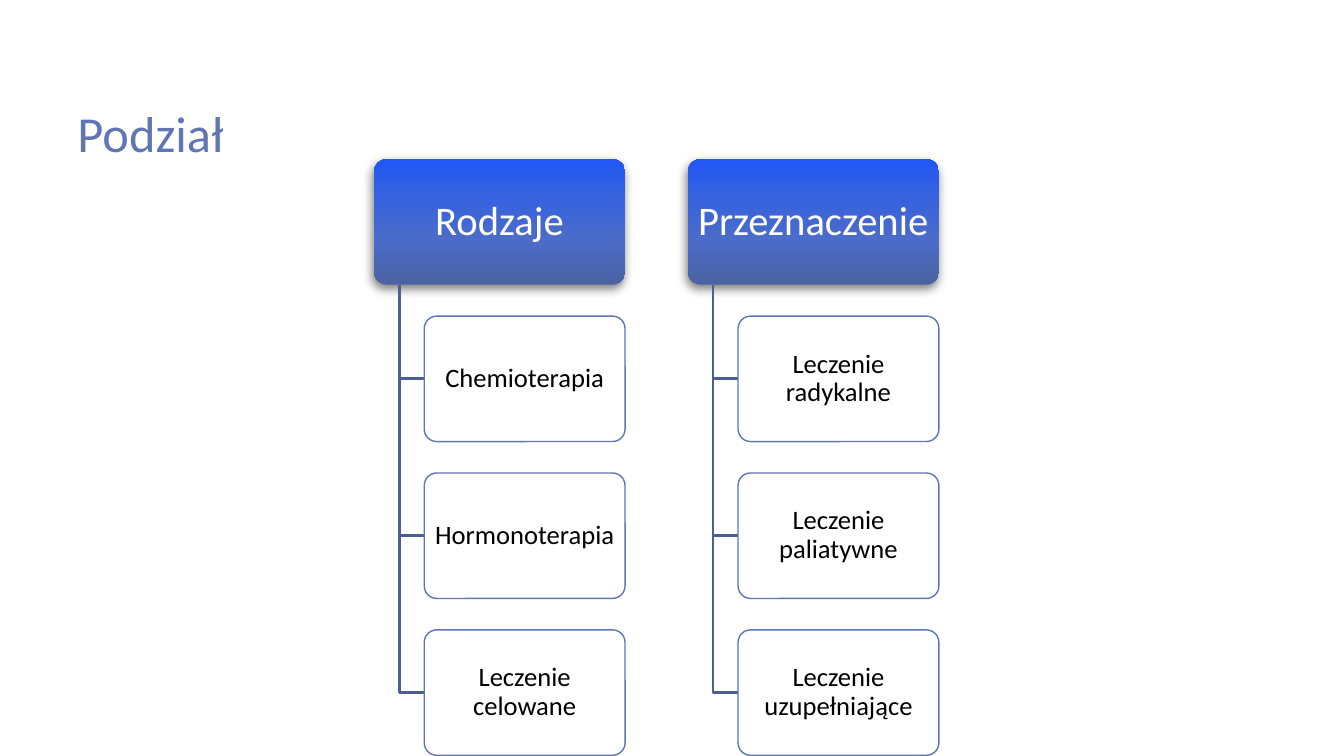
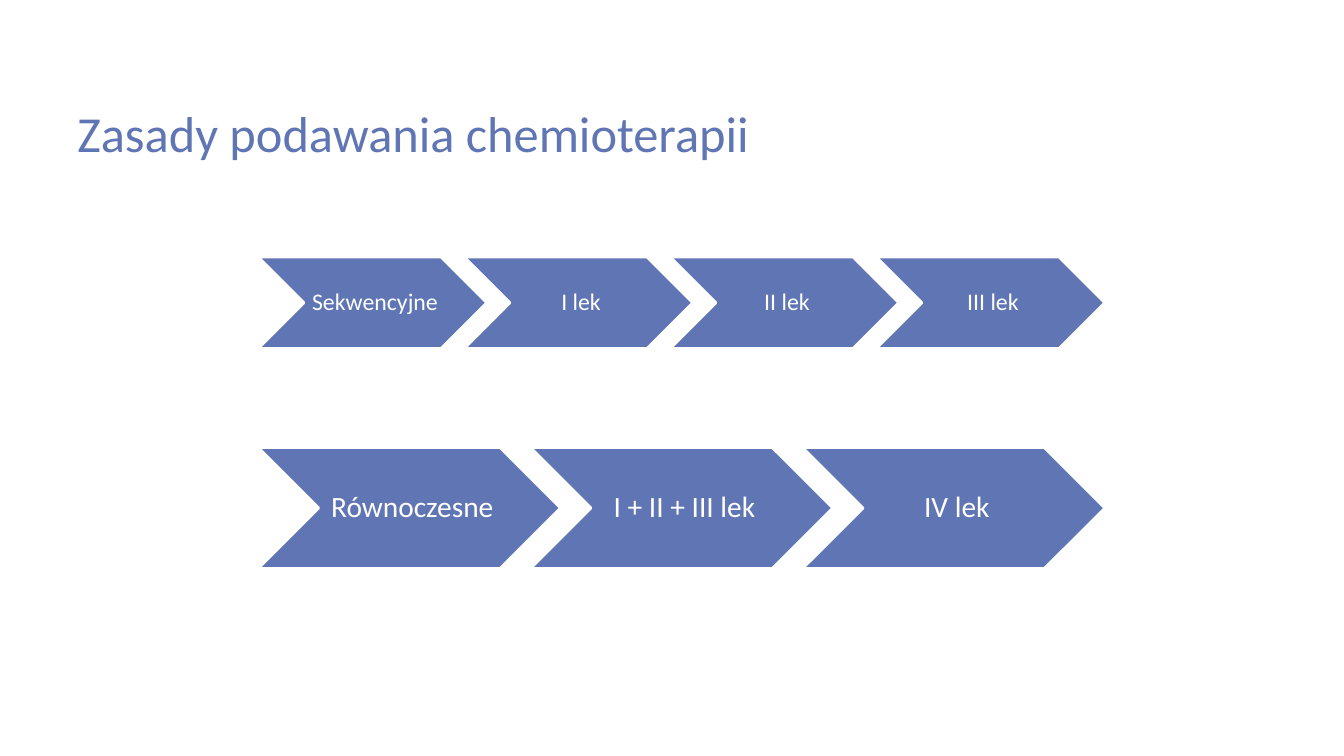
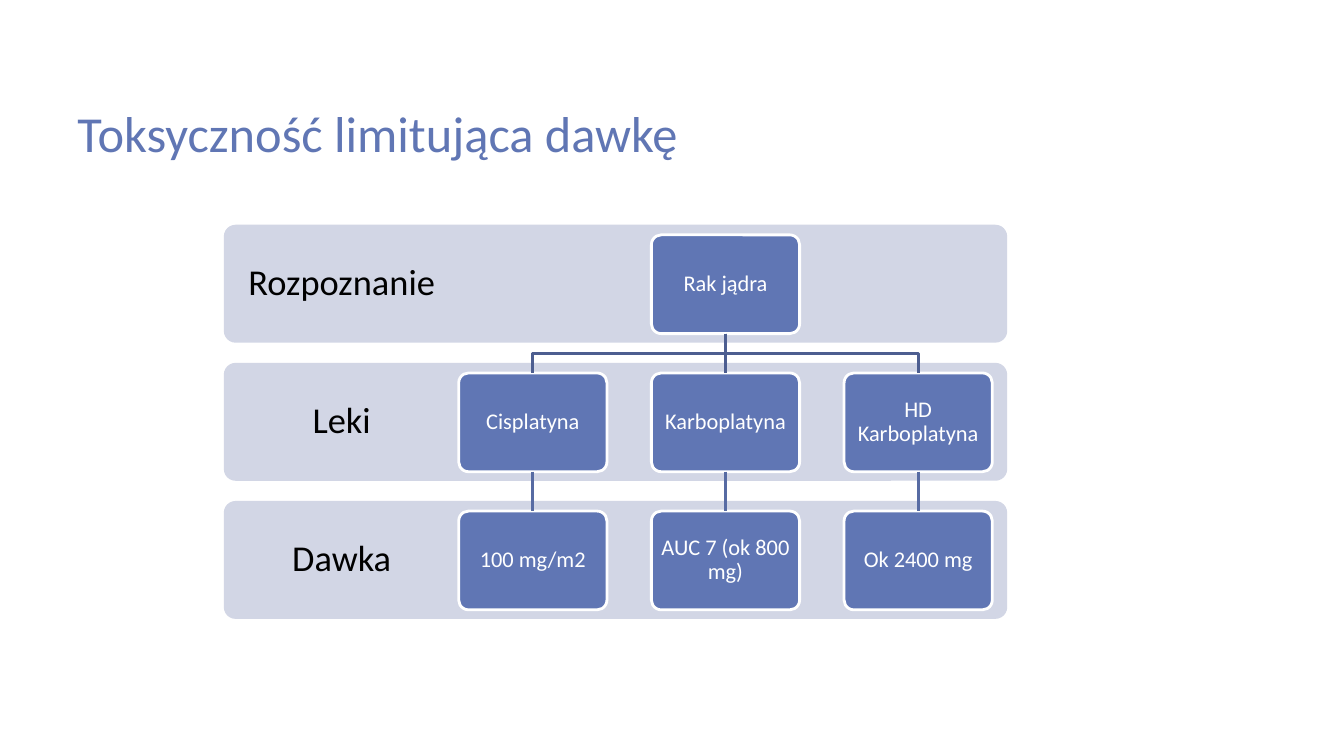
"""Three diagram slides about the rules of chemotherapy."""
from lxml import etree
from pptx import Presentation
from pptx import util as u
from pptx.dml.color import RGBColor
from pptx.enum import shapes, text
from pptx.oxml import ns

FONT = "Calibri"
BLUE = RGBColor(0x60, 0x76, 0xB4)
TRUNK = RGBColor(0x4D, 0x5E, 0x90)
BRANCH = RGBColor(0x57, 0x6B, 0xA3)
BAND = RGBColor(0xD2, 0xD6, 0xE5)
WHITE = RGBColor(0xFF, 0xFF, 0xFF)
BLACK = RGBColor(0x00, 0x00, 0x00)
HEADER_STOPS = (
    (0, RGBColor(0x4B, 0x62, 0xA1)),
    (35, RGBColor(0x4B, 0x6C, 0xC9)),
    (70, RGBColor(0x36, 0x62, 0xDE)),
    (100, RGBColor(0x21, 0x58, 0xF3)),
)
ROUND = shapes.MSO_SHAPE.ROUNDED_RECTANGLE
CHEVRON = shapes.MSO_SHAPE.CHEVRON


def write(shape, content, size, colour, align=text.PP_ALIGN.CENTER,
          anchor=text.MSO_ANCHOR.MIDDLE, insets=(0.04, 0.03, 0.04, 0.03), spacing=0.9):
    """Put one formatted paragraph into a shape; insets run left, top, right, bottom."""
    frame = shape.text_frame
    frame.word_wrap = True
    frame.vertical_anchor = anchor
    frame.margin_left, frame.margin_top, frame.margin_right, frame.margin_bottom = map(u.Inches, insets)
    paragraph = frame.paragraphs[0]
    paragraph.text = content
    paragraph.alignment = align
    paragraph.line_spacing = spacing
    paragraph.font.name = FONT
    paragraph.font.size = u.Pt(size)
    paragraph.font.color.rgb = colour


def add_block(slide, preset, box, fill, line=None, line_width=2):
    """Add a flat preset shape in box (left, top, width, height)."""
    shape = slide.shapes.add_shape(preset, *map(u.Inches, box))
    shape.shadow.inherit = False
    shape.fill.solid()
    shape.fill.fore_color.rgb = fill
    if line is None:
        shape.line.fill.background()
    else:
        shape.line.color.rgb = line
        shape.line.width = u.Pt(line_width)
    if preset == ROUND:
        shape.adjustments[0] = 0.1
    return shape


def add_path(slide, points):
    """Draw an open line through points."""
    start, *rest = [(u.Inches(x), u.Inches(y)) for x, y in points]
    builder = slide.shapes.build_freeform(*start)
    builder.add_line_segments(rest, close=False)
    path = builder.convert_to_shape()
    path.shadow.inherit = False
    path.fill.background()
    path.line.color.rgb = TRUNK
    path.line.width = u.Pt(2)


def join_down(slide, upper, lower, colour):
    """Connect the bottom of the upper shape to the top of the lower one."""
    connector = slide.shapes.add_connector(shapes.MSO_CONNECTOR.STRAIGHT, 0, 0, 0, 0)
    connector.begin_connect(upper, 2)
    connector.end_connect(lower, 0)
    connector.line.color.rgb = colour
    connector.line.width = u.Pt(2)
    etree.SubElement(connector._element.spPr, ns.qn("a:effectLst"))


def add_colour(parent, colour):
    """Append an RGB colour element and return it."""
    return etree.SubElement(parent, ns.qn("a:srgbClr"), val=str(colour))


def style_header(shape):
    """Give a header its upward gradient and soft shadow."""
    shape.fill.gradient()
    shape.fill.gradient_angle = 90
    properties = shape._element.spPr
    stops = properties.find(".//" + ns.qn("a:gsLst"))
    for stop in list(stops):
        stops.remove(stop)
    for position, colour in HEADER_STOPS:
        add_colour(etree.SubElement(stops, ns.qn("a:gs"), pos=str(position * 1000)), colour)
    shadow = etree.SubElement(
        properties.find(ns.qn("a:effectLst")), ns.qn("a:outerShdw"),
        blurRad=str(u.Pt(7)), dist=str(u.Pt(3)), dir=str(110 * 60000), rotWithShape="0")
    etree.SubElement(add_colour(shadow, BLACK), ns.qn("a:alpha"), val="50000")


def add_titled_slide(presentation, title):
    """Add a blank slide with the shared title style."""
    slide = presentation.slides.add_slide(presentation.slide_layouts[6])
    box = slide.shapes.add_textbox(*map(u.Inches, (0.67, 0.41, 9.49, 1.25)))
    write(box, title, 36, BLUE, align=text.PP_ALIGN.LEFT, anchor=text.MSO_ANCHOR.BOTTOM,
          insets=(0.1, 0.05, 0.1, 0.05), spacing=1.0)
    return slide


def add_branch_list(slide, left, top, width, heading, items):
    """Draw a header with items hanging from a trunk line."""
    height = width / 2
    step = height * 1.25
    trunk = left + width / 10
    indent = width / 5
    header = add_block(slide, ROUND, (left, top, width, height), BLUE)
    style_header(header)
    write(header, heading, 29, WHITE, insets=(0.06, 0.04, 0.06, 0.04))
    for row, item in enumerate(items, 1):
        item_top = top + row * step
        middle = item_top + height / 2
        add_path(slide, [(trunk, top + height), (trunk, middle), (left + indent, middle)])
        node = add_block(slide, ROUND, (left + indent, item_top, width - indent, height),
                         WHITE, BLUE, 1)
        write(node, item, 19, BLACK)


def add_chevron_row(slide, left, top, width, steps, size, insets):
    """Draw a row of overlapping chevrons."""
    for column, step in enumerate(steps):
        chevron = add_block(slide, CHEVRON, (left + column * width * 0.9, top, width, width / 2.5),
                            BLUE, WHITE)
        write(chevron, step, size, WHITE, insets=insets)


def add_banded_tree(slide, left, top, width, labels, root, branches):
    """Draw labelled bands holding a root box and one column per branch."""
    band_height, band_step, label_width = 1.17, 1.37, 2.33
    box_width, box_height, box_offset = 1.47, 0.98, 0.1
    box_step = box_width * 1.3

    def add_box(column, row, content):
        """Place one box on the grid of columns and bands."""
        box = add_block(slide, ROUND, (left + label_width + column * box_step,
                                       top + box_offset + row * band_step,
                                       box_width, box_height), BLUE, WHITE)
        write(box, content, 16, WHITE, insets=(0.07,) * 4)
        return box

    for row, label in enumerate(labels):
        band = add_block(slide, ROUND, (left, top + row * band_step, width, band_height), BAND)
        write(band, label, 26, BLACK, insets=(0.17, 0.17, width - label_width + 0.16, 0.17))

    centre = (len(branches) - 1) / 2
    root_box = add_box(centre, 0, root)
    root_bottom = top + box_offset + box_height
    gap = band_step - box_height
    root_middle = left + label_width + centre * box_step + box_width / 2
    for column, (drug, dose) in enumerate(branches):
        drug_box = add_box(column, 1, drug)
        dose_box = add_box(column, 2, dose)
        join_down(slide, drug_box, dose_box, BRANCH)
        if column == centre:
            join_down(slide, root_box, drug_box, TRUNK)
        else:
            middle = root_middle + (column - centre) * box_step
            bend = root_bottom + gap / 2
            add_path(slide, [(root_middle, root_bottom), (root_middle, bend),
                             (middle, bend), (middle, root_bottom + gap)])


def main():
    """Build and save the presentation."""
    presentation = Presentation()
    presentation.slide_width = u.Inches(13.33)
    presentation.slide_height = u.Inches(7.5)

    slide = add_titled_slide(presentation, "Podział")
    columns = (
        ("Rodzaje", ("Chemioterapia", "Hormonoterapia", "Leczenie celowane")),
        ("Przeznaczenie", ("Leczenie radykalne", "Leczenie paliatywne", "Leczenie uzupełniające")),
    )
    width = 2.49
    for column, (heading, items) in enumerate(columns):
        add_branch_list(slide, 3.71 + column * width * 1.25, 1.58, width, heading, items)

    slide = add_titled_slide(presentation, "Zasady podawania chemioterapii")
    add_chevron_row(slide, 2.56, 2.55, 2.27, ("Sekwencyjne", "I lek", "II lek", "III lek"),
                    17, (0.07, 0.02, 0.02, 0.02))
    add_chevron_row(slide, 2.56, 4.44, 3, ("Równoczesne", "I + II + III lek", "IV lek"),
                    21, (0.09, 0.03, 0.03, 0.03))

    slide = add_titled_slide(presentation, "Toksyczność limitująca dawkę")
    add_banded_tree(slide, 2.22, 2.23, 7.77, ("Rozpoznanie", "Leki", "Dawka"), "Rak jądra", (
        ("Cisplatyna", "100 mg/m2"),
        ("Karboplatyna", "AUC 7 (ok 800 mg)"),
        ("HD Karboplatyna", "Ok 2400 mg"),
    ))

    presentation.save("out.pptx")


if __name__ == "__main__":
    main()
